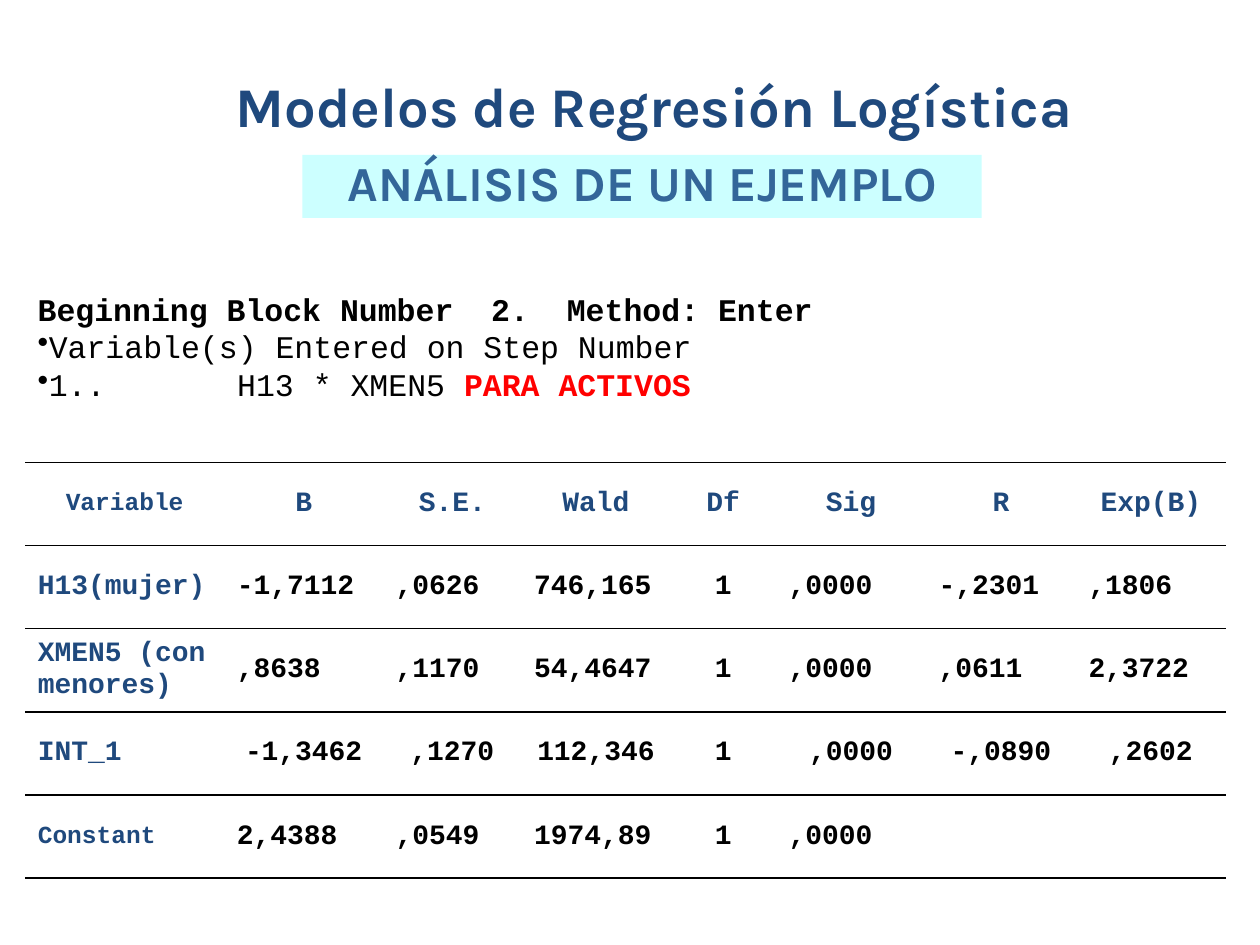
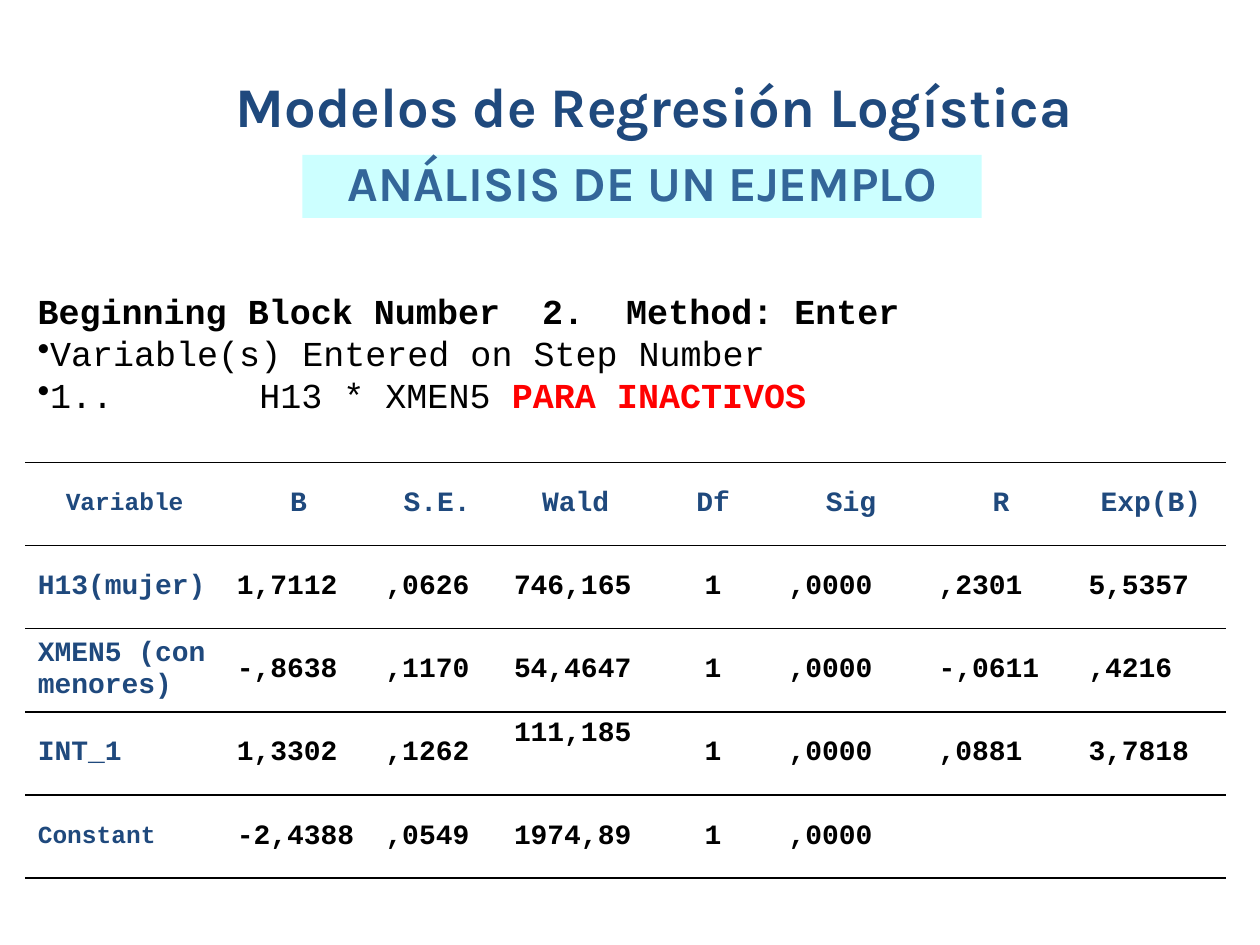
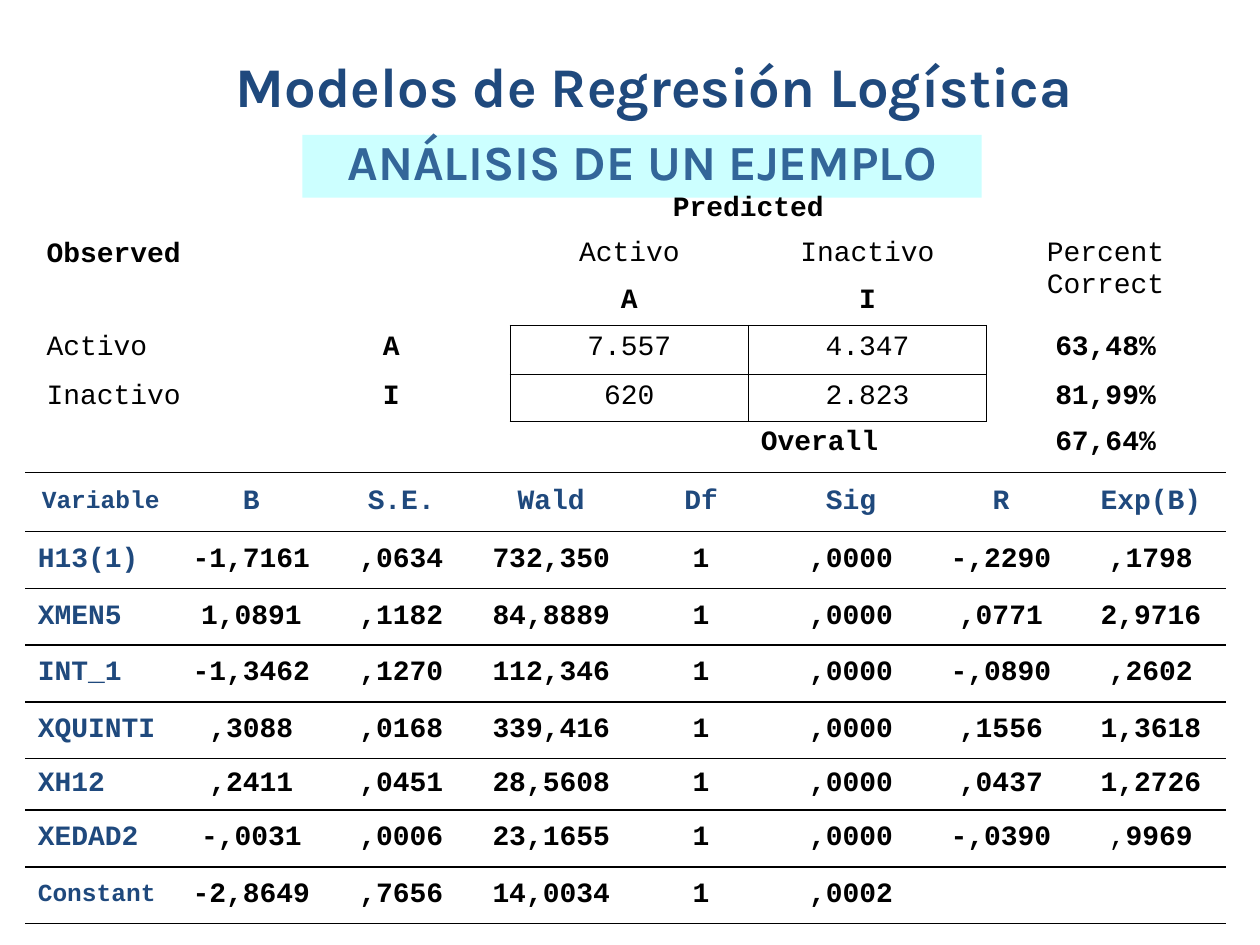
from lxml import etree
from pptx import Presentation
from pptx import util as u
from pptx.dml.color import RGBColor
from pptx.enum import shapes, text
from pptx.oxml.ns import qn

NAVY, STEEL, CYAN, BLACK, RED = "1F497D", "336699", "CCFFFF", "000000", "FF0000"
TITLE_FONT, BODY_FONT = "Karla", "Courier New"
NO_STYLE = "{2D5ABB26-0587-4C30-8999-92F81FD0307C}"
LEFT, CENTRE = text.PP_ALIGN.LEFT, text.PP_ALIGN.CENTER
TOP, MIDDLE = text.MSO_ANCHOR.TOP, text.MSO_ANCHOR.MIDDLE

TITLE = "Modelos de Regresión Logística"
SUBTITLE = "ANÁLISIS DE UN EJEMPLO"
HEADER = ["Variable", "B", "S.E.", "Wald", "Df", "Sig", "R", "Exp(B)"]
SMALL_LABELS = {"Variable", "Constant"}

BLOCK_SLIDES = [
    {
        "group": "PARA ACTIVOS", "size": 18, "height": 1.04,
        "columns": [1.58, 1.26, 1.1, 1.18, 0.84, 1.19, 1.19, 1.19],
        "centred": {"INT_1"}, "raised": set(),
        "rows": [
            ["H13(mujer)", "-1,7112", ",0626", "746,165", "1", ",0000", "-,2301", ",1806"],
            ["XMEN5 (con menores)", ",8638", ",1170", "54,4647", "1", ",0000", ",0611", "2,3722"],
            ["INT_1", "-1,3462", ",1270", "112,346", "1", ",0000", "-,0890", ",2602"],
            ["Constant", "2,4388", ",0549", "1974,89", "1", ",0000", "", ""],
        ],
    },
    {
        "group": "PARA INACTIVOS", "size": 20, "height": 1.11,
        "columns": [1.58, 1.18, 1.02, 1.18, 1, 1.19, 1.19, 1.19],
        "centred": set(), "raised": {"111,185"},
        "rows": [
            ["H13(mujer)", "1,7112", ",0626", "746,165", "1", ",0000", ",2301", "5,5357"],
            ["XMEN5 (con menores)", "-,8638", ",1170", "54,4647", "1", ",0000", "-,0611", ",4216"],
            ["INT_1", "1,3302", ",1262", "111,185", "1", ",0000", ",0881", "3,7818"],
            ["Constant", "-2,4388", ",0549", "1974,89", "1", ",0000", "", ""],
        ],
    },
]

FULL_MODEL = [
    ["H13(1)", "-1,7161", ",0634", "732,350", "1", ",0000", "-,2290", ",1798"],
    ["XMEN5", "1,0891", ",1182", "84,8889", "1", ",0000", ",0771", "2,9716"],
    ["INT_1", "-1,3462", ",1270", "112,346", "1", ",0000", "-,0890", ",2602"],
    ["XQUINTI", ",3088", ",0168", "339,416", "1", ",0000", ",1556", "1,3618"],
    ["XH12", ",2411", ",0451", "28,5608", "1", ",0000", ",0437", "1,2726"],
    ["XEDAD2", "-,0031", ",0006", "23,1655", "1", ",0000", "-,0390",
     [(",", {"bold": False}), ("9969", {})]],
    ["Constant", "-2,8649", ",7656", "14,0034", "1", ",0002", "", ""],
]

CLASSIFICATION = [
    ["Observed", "", "Predicted", "", ""],
    ["", "", "Activo", "Inactivo", "Percent Correct"],
    ["", "", "A", "I", ""],
    ["Activo", "A", "7.557", "4.347", "63,48%"],
    ["Inactivo", "I", "620", "2.823", "81,99%"],
    ["", "", "", "Overall", "67,64%"],
]
REGULAR = {"Activo", "Inactivo", "Percent Correct", "7.557", "4.347", "620", "2.823"}
LEFT_ALIGNED = {(0, 0), (3, 0), (4, 0), (5, 3)}
MERGES = [((0, 0), (2, 0)), ((0, 1), (2, 1)), ((0, 2), (0, 3)),
          ((1, 4), (2, 4)), ((5, 0), (5, 2))]
BOXED = {(3, 2): "LRTB", (3, 3): "LRTB", (4, 2): "LRT", (4, 3): "LRTB"}


def rgb(value):
    return RGBColor.from_string(value)


def inches(*values):
    return [u.Inches(value) for value in values]


def write(frame, *paragraphs, font=BODY_FONT, size=16, color=BLACK, bold=True,
          align=LEFT, anchor=TOP, spacing=None):
    """Fill a text frame; a paragraph is a string or a list of (text, overrides)."""
    frame.word_wrap = True
    frame.vertical_anchor = anchor
    for index, content in enumerate(paragraphs):
        paragraph = frame.add_paragraph() if index else frame.paragraphs[0]
        paragraph.alignment = align
        paragraph.line_spacing = spacing
        if not content:
            etree.SubElement(paragraph._p, qn("a:endParaRPr"), sz=str(size * 100))
            continue
        pieces = [(content, {})] if isinstance(content, str) else content
        for piece, overrides in pieces:
            run = paragraph.add_run()
            run.text = piece
            run.font.name, run.font.size = font, u.Pt(size)
            run.font.bold = overrides.get("bold", bold)
            run.font.color.rgb = rgb(overrides.get("color", color))


def add_bullet(paragraph, tab):
    properties = paragraph._p.get_or_add_pPr()
    etree.SubElement(properties, qn("a:buChar"), char="•")
    tabs = etree.SubElement(properties, qn("a:tabLst"))
    etree.SubElement(tabs, qn("a:tab"), pos=str(u.Inches(tab)), algn="l")


def add_borders(cell, sides):
    properties = cell._tc.get_or_add_tcPr()
    lines = []
    for side in sides:
        line = etree.Element(qn(f"a:ln{side}"), w=str(u.Pt(1)))
        fill = etree.SubElement(line, qn("a:solidFill"))
        etree.SubElement(fill, qn("a:srgbClr"), val=BLACK)
        lines.append(line)
    properties[:0] = lines


def add_plain_table(slide, left, top, columns, heights):
    frame = slide.shapes.add_table(len(heights), len(columns),
                                   *inches(left, top, sum(columns), sum(heights)))
    table = frame.table
    table.first_row = table.horz_banding = False
    table._tbl.tblPr.find(qn("a:tableStyleId")).text = NO_STYLE
    for column, width in zip(table.columns, columns):
        column.width = u.Inches(width)
    for row, height in zip(table.rows, heights):
        row.height = u.Inches(height)
    for cell in table.iter_cells():
        cell.fill.background()
    return table


def add_coefficients(slide, top, columns, heights, rows, centred, raised=()):
    table = add_plain_table(slide, 0.2, top, columns, heights)
    for r, values in enumerate([HEADER] + rows):
        for c, value in enumerate(values):
            cell = table.cell(r, c)
            label = r == 0 or c == 0
            in_centre = r == 0 or HEADER[c] == "Df" or (c > 0 and values[0] in centred)
            is_text = isinstance(value, str)
            write(cell.text_frame, value,
                  size=14 if is_text and value in SMALL_LABELS else 16,
                  color=NAVY if label else BLACK,
                  align=CENTRE if in_centre else LEFT)
            cell.vertical_anchor = TOP if is_text and value in raised else MIDDLE
            add_borders(cell, "TB")


def add_classification(slide):
    table = add_plain_table(slide, 0.27, 1.47, [1.89] * 5,
                            [0.37, 0.37, 0.37, 0.39, 0.37, 0.37])
    for r, values in enumerate(CLASSIFICATION):
        for c, value in enumerate(values):
            cell = table.cell(r, c)
            write(cell.text_frame, value, bold=value not in REGULAR,
                  align=LEFT if (r, c) in LEFT_ALIGNED else CENTRE)
            cell.vertical_anchor = TOP if r else MIDDLE
            add_borders(cell, BOXED.get((r, c), ""))
    for first, last in MERGES:
        table.cell(*first).merge(table.cell(*last))


def add_titled_slide(presentation, top):
    slide = presentation.slides.add_slide(presentation.slide_layouts[5])
    title = slide.shapes.title
    title.left, title.top, title.width, title.height = inches(1.77, top, 7.22, 0.63)
    write(title.text_frame, TITLE, font=TITLE_FONT, size=32, color=NAVY)
    banner = slide.shapes.add_shape(shapes.MSO_SHAPE.RECTANGLE,
                                    *inches(2.4, top + 0.71, 5.39, 0.5))
    banner.shadow.inherit = False
    banner.fill.solid()
    banner.fill.fore_color.rgb = rgb(CYAN)
    banner.line.fill.background()
    write(banner.text_frame, SUBTITLE, font=TITLE_FONT, size=28, color=STEEL,
          align=CENTRE, spacing=0.85)
    return slide


def add_block_slide(presentation, block):
    slide = add_titled_slide(presentation, 0.52)
    add_coefficients(slide, 3.67, block["columns"], [0.66] * 5, block["rows"],
                     block["centred"], block["raised"])
    intro = slide.shapes.add_textbox(*inches(0.2, 2.25, 9.45, block["height"]))
    regular = {"bold": False}
    write(intro.text_frame,
          "Beginning Block Number  2.  Method: Enter",
          [("Variable(s) Entered on Step Number", regular)],
          [("1..\tH13 * XMEN5 ", regular), (block["group"], {"color": RED})],
          size=block["size"])
    for paragraph in intro.text_frame.paragraphs[1:]:
        add_bullet(paragraph, tab=block["size"] * 0.088)


def main():
    presentation = Presentation()
    presentation.slide_width, presentation.slide_height = inches(10, 7.5)
    for block in BLOCK_SLIDES:
        add_block_slide(presentation, block)
    slide = add_titled_slide(presentation, 0.36)
    add_classification(slide)
    add_coefficients(slide, 3.75, [1.2] + [1.19] * 7,
                     [0.47, 0.45, 0.45, 0.45, 0.45, 0.41, 0.45, 0.45],
                     FULL_MODEL, centred={row[0] for row in FULL_MODEL})
    presentation.save("out.pptx")


if __name__ == "__main__":
    main()
